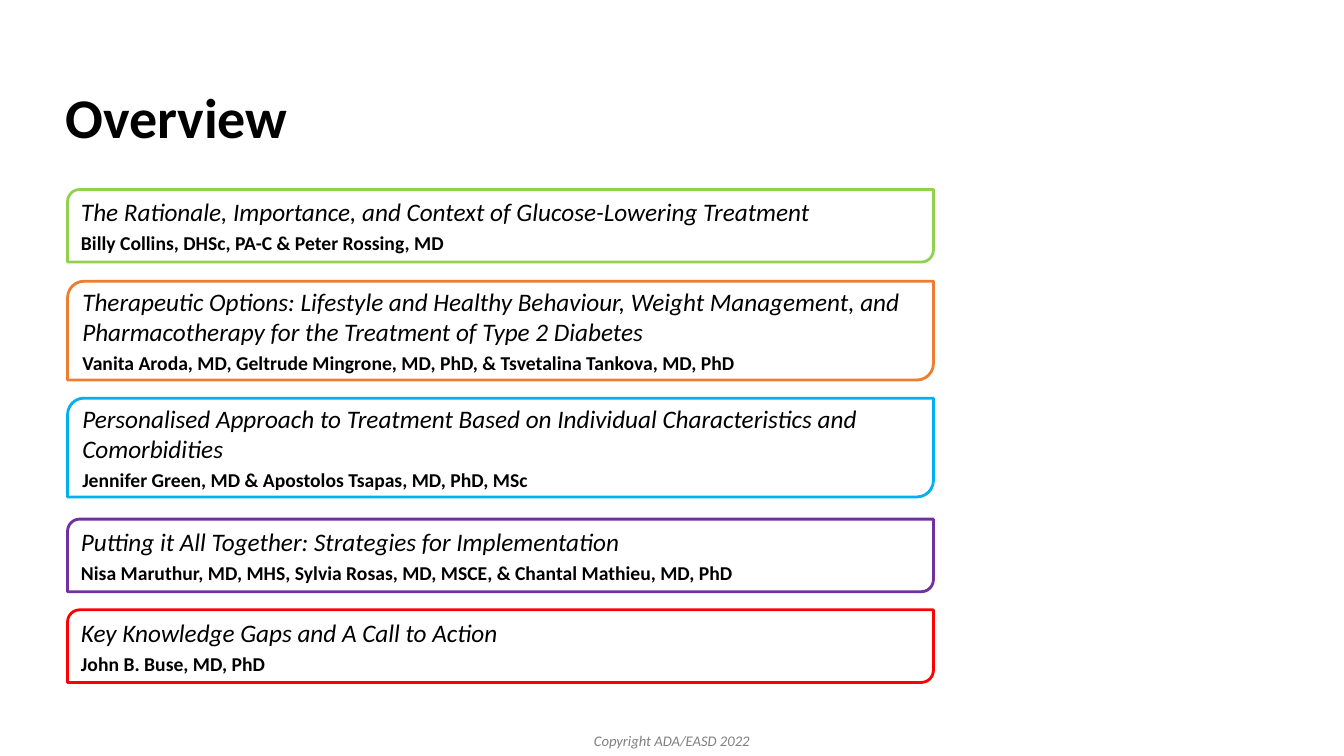
from pptx import Presentation
from pptx.dml.color import RGBColor
from pptx.enum.shapes import MSO_SHAPE
from pptx.enum.text import MSO_ANCHOR, MSO_AUTO_SIZE, PP_ALIGN
from pptx.util import Pt

CARD_SHAPE = MSO_SHAPE.ROUND_2_DIAG_RECTANGLE
TOP, MIDDLE = MSO_ANCHOR.TOP, MSO_ANCHOR.MIDDLE
LEFT, CENTER = PP_ALIGN.LEFT, PP_ALIGN.CENTER
NO_FIT, GROW = MSO_AUTO_SIZE.NONE, MSO_AUTO_SIZE.SHAPE_TO_FIT_TEXT

FORMATS = {
    "title": {"size": Pt(40), "bold": True, "italic": False},
    "topic": {"size": Pt(18), "bold": False, "italic": True},
    "speakers": {"size": Pt(14), "bold": True, "italic": False},
    "footer": {"size": Pt(10.5), "bold": False, "italic": True},
}

SHORT, TALL = 51.84, 70.56
SESSIONS = [
    (135.36, SHORT, "92D050",
     "The Rationale, Importance, and Context of Glucose-Lowering Treatment",
     "Billy Collins, DHSc, PA-C & Peter Rossing, MD"),
    (200.88, TALL, "ED7D31",
     "Therapeutic Options: Lifestyle and Healthy Behaviour, Weight Management, "
     "and Pharmacotherapy for the Treatment of Type 2 Diabetes",
     "Vanita Aroda, MD, Geltrude Mingrone, MD, PhD, & Tsvetalina Tankova, MD, PhD"),
    (284.4, TALL, "00B0F0",
     "Personalised Approach to Treatment Based on Individual Characteristics "
     "and Comorbidities",
     "Jennifer Green, MD & Apostolos Tsapas, MD, PhD, MSc"),
    (370.8, SHORT, "7030A0",
     "Putting it All Together: Strategies for Implementation",
     "Nisa Maruthur, MD, MHS, Sylvia Rosas, MD, MSCE, & Chantal Mathieu, MD, PhD"),
    (435.6, SHORT, "FF0000",
     "Key Knowledge Gaps and A Call to Action",
     "John B. Buse, MD, PhD"),
]


def color(value):
    return RGBColor.from_string(value)


def write(para, text, style, ink="000000", align=LEFT, after=0):
    para.alignment = align
    para.space_before = Pt(0)
    para.space_after = Pt(after)
    span = para.add_run()
    span.text = text
    span.font.name = "Calibri"
    span.font.color.rgb = color(ink)
    for name, value in FORMATS[style].items():
        setattr(span.font, name, value)


deck = Presentation()
deck.slide_width, deck.slide_height = Pt(960), Pt(540)
page = deck.slides.add_slide(deck.slide_layouts[5])

title = page.shapes.title
title.left, title.top, title.width, title.height = Pt(39.6), Pt(60.48), Pt(872.64), Pt(90)
title.text_frame.vertical_anchor = TOP
title.text_frame.auto_size = NO_FIT
heading = title.text_frame.paragraphs[0]
heading.line_spacing = 0.9
write(heading, "Overview", "title")

for top, height, outline, topic, speakers in SESSIONS:
    card = page.shapes.add_shape(CARD_SHAPE, Pt(48.24), Pt(top), Pt(618.48), Pt(height))
    card.shadow.inherit = False
    card.fill.solid()
    card.fill.fore_color.rgb = color("FFFFFF")
    card.line.color.rgb = color(outline)
    card.line.width = Pt(2)
    frame = card.text_frame
    frame.word_wrap = True
    frame.vertical_anchor = MIDDLE
    write(frame.paragraphs[0], topic, "topic", after=3)
    write(frame.add_paragraph(), speakers, "speakers", after=3)

footer = page.shapes.add_textbox(Pt(413.28), Pt(519.12), Pt(133.2), Pt(20.88))
footer.text_frame.word_wrap = False
footer.text_frame.auto_size = GROW
write(footer.text_frame.paragraphs[0], "Copyright ADA/EASD 2022", "footer", "808080", CENTER, 6)

deck.save("out.pptx")
